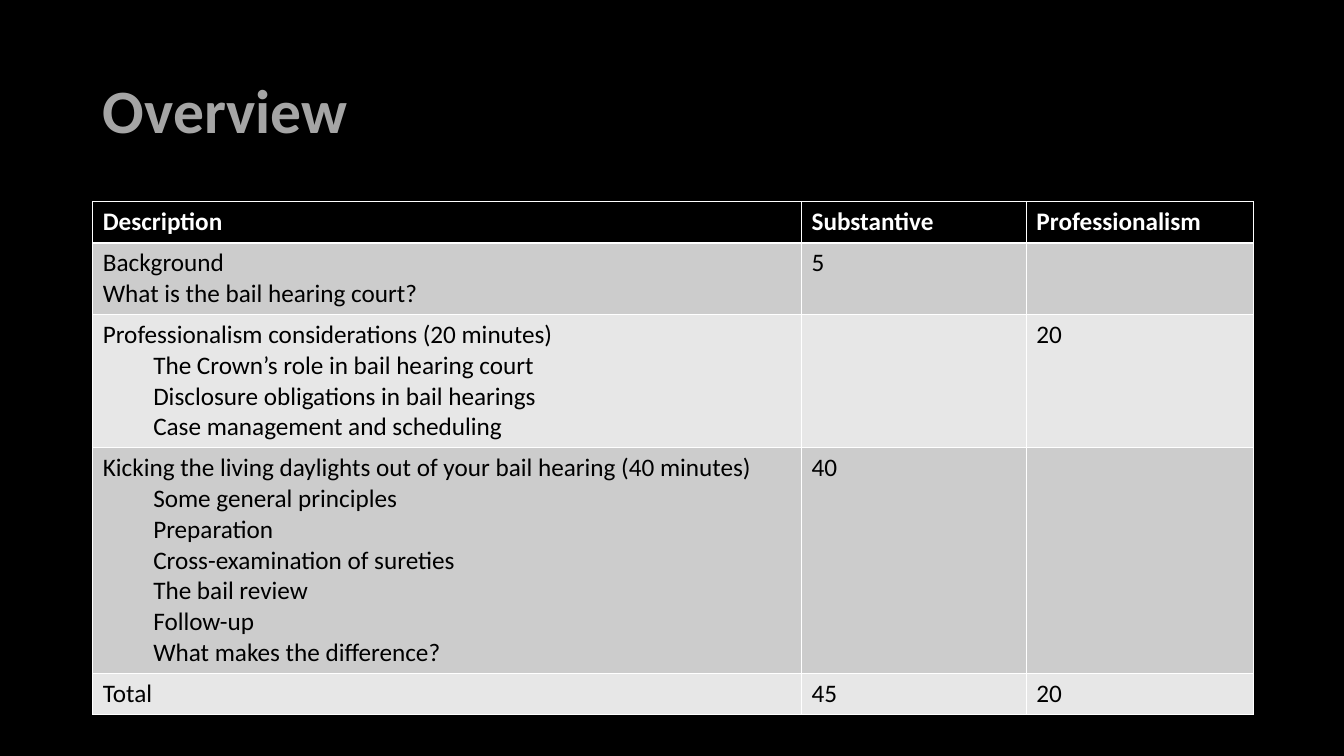
from pptx import Presentation
from pptx.dml.color import RGBColor
from pptx.enum.text import MSO_ANCHOR, PP_ALIGN
from pptx.util import Inches, Pt

LEFT = PP_ALIGN.LEFT
MIDDLE = MSO_ANCHOR.MIDDLE
FONT = "Calibri"
COLORS = {"back": "000000", "title": "A5A5A5", "head": "FFFFFF",
          "text": "000000", "odd": "CCCCCC", "even": "E7E7E7"}

# Each row: height, description lines, substantive, professionalism
ROWS = [
    (0.41, ["Description"], "Substantive", "Professionalism"),
    (0.7, ["Background", "What is the bail hearing court?"], "5", ""),
    (1.32, ["Professionalism considerations (20 minutes)",
            "\tThe Crown’s role in bail hearing court",
            "\tDisclosure obligations in bail hearings",
            "\tCase management and scheduling"], "", "20"),
    (2.24, ["Kicking the living daylights out of your bail hearing (40 minutes)",
            "\tSome general principles",
            "\tPreparation",
            "\tCross-examination of sureties",
            "\tThe bail review",
            "\tFollow-up",
            "\tWhat makes the difference?"], "40", ""),
    (0.41, ["Total"], "45", "20"),
]
WIDTHS = [7.03, 2.23, 2.25]


def color(name):
    return RGBColor.from_string(COLORS[name])


def style(para, size, name, bold):
    para.font.name = FONT
    para.font.size = Pt(size)
    para.font.bold = bold
    para.font.color.rgb = color(name)


prs = Presentation()
prs.slide_width, prs.slide_height = Inches(13.33), Inches(7.5)
slide = prs.slides.add_slide(prs.slide_layouts[5])
slide.background.fill.solid()
slide.background.fill.fore_color.rgb = color("back")

title = slide.shapes.title
title.left, title.top = Inches(0.92), Inches(0.4)
title.width, title.height = Inches(11.5), Inches(1.45)
title.text_frame.text = "Overview"
title.text_frame.vertical_anchor = MIDDLE
para = title.text_frame.paragraphs[0]
para.alignment = LEFT
para.line_spacing = 0.9
style(para, 44, "title", True)

# The default table style draws the white rules
table = slide.shapes.add_table(len(ROWS), len(WIDTHS), Inches(0.92), Inches(2),
                               Inches(11.5), Inches(5.01)).table
for col, width in zip(table.columns, WIDTHS):
    col.width = Inches(width)

for r, (height, lines, *marks) in enumerate(ROWS):
    table.rows[r].height = Inches(height)
    head = r == 0
    fill = "back" if head else "odd" if r % 2 else "even"
    for c, items in enumerate([lines] + [[mark] for mark in marks]):
        cell = table.cell(r, c)
        cell.fill.solid()
        cell.fill.fore_color.rgb = color(fill)
        cell.text = "\n".join(item.strip() for item in items)
        for para, item in zip(cell.text_frame.paragraphs, items):
            style(para, 18, "head" if head else "text", head)
            if item.startswith("\t"):
                para.level = 1
                para._p.get_or_add_pPr().set("marL", str(Inches(0.5)))

prs.save("out.pptx")
